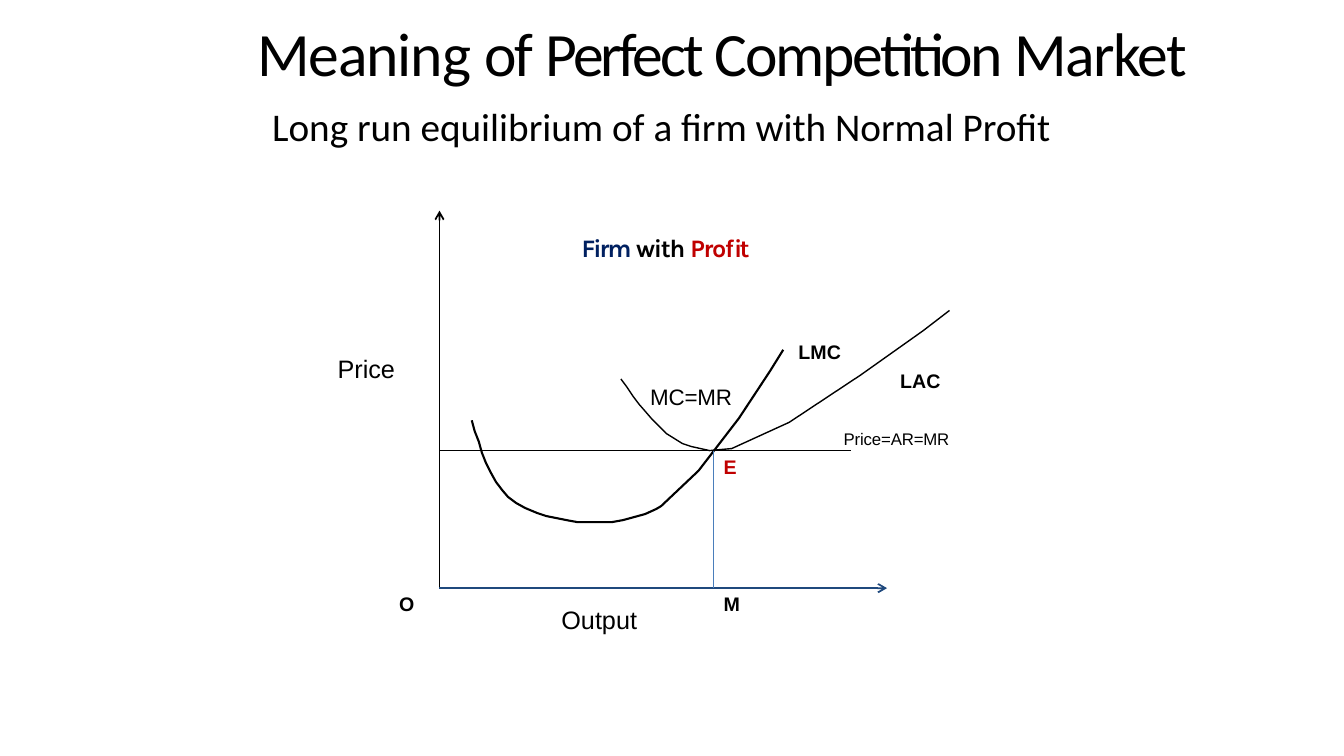
from dataclasses import dataclass

from lxml.etree import SubElement
from pptx import Presentation
from pptx.dml.color import RGBColor
from pptx.enum.shapes import MSO_CONNECTOR
from pptx.enum.text import MSO_ANCHOR
from pptx.oxml.ns import qn
from pptx.util import Inches, Pt

# Grid: one cell is a tenth of an inch, so the slide is 133.33 columns by 75 rows
CELL = Inches(0.1)
COLUMNS, ROWS = 133.33, 75

# Shared places of the diagram, in columns and rows
ORIGIN_X, ORIGIN_Y = 43.6, 58.35
OUTPUT_X, PRICE_Y = 70.8, 44.7


@dataclass(frozen=True)
class Theme:
    black: str = "000000"
    navy: str = "002060"
    red: str = "C00000"
    axis_blue: str = "1F497D"
    drop_blue: str = "4A7EBB"
    heading_font: str = "Calibri"
    caption_font: str = "Karla"
    label_font: str = "Arial"
    title: int = 44
    subtitle: int = 28
    label: int = 18
    equation: int = 16
    point: int = 14
    note: int = 12


THEME = Theme()

# Curves as (column, row) points
LAC_CURVE = [
    (61.6, 37.6), (62.2, 38.4), (62.8, 39.3), (63.4, 40.1), (64.1, 40.9),
    (64.7, 41.6), (65.4, 42.3), (66.1, 43.0), (66.9, 43.5), (67.7, 44.0),
    (68.6, 44.3), (69.5, 44.5), (70.4, 44.7), (71.5, 44.6), (72.6, 44.5),
    (78.3, 41.9), (85.4, 37.2), (91.6, 32.8), (94.2, 30.8),
]
LMC_CURVE = [
    (46.8, 41.7), (47.1, 42.8), (47.5, 43.8), (47.8, 44.9), (48.2, 45.9),
    (48.7, 46.9), (49.2, 47.8), (49.8, 48.6), (50.4, 49.3), (51.2, 49.9),
    (52.1, 50.4), (53.3, 50.9), (54.2, 51.2), (55.2, 51.4), (56.2, 51.6),
    (57.3, 51.8), (58.4, 51.8), (59.5, 51.8), (60.7, 51.8), (61.8, 51.6),
    (62.9, 51.3), (64.0, 51.0), (65.1, 50.5), (65.6, 50.2), (69.3, 46.7),
    (73.3, 41.5), (76.4, 36.8), (77.7, 34.7),
]


def cells(*counts):
    return [round(count * CELL) for count in counts]


def apply_format(target, values):
    for name, value in values.items():
        setattr(target, name, value)


def add_text(page, place, spans, size, font=THEME.label_font, bold=False,
             color=THEME.black, before=1, leading=None, anchor=MSO_ANCHOR.TOP):
    """Spans are (text, letter spacing in points) with an optional own colour."""
    frame = page.shapes.add_textbox(*cells(*place)).text_frame
    apply_format(frame, {
        "word_wrap": True, "vertical_anchor": anchor,
        "margin_left": Inches(0.01), "margin_right": 0,
        "margin_top": 0 if leading else Inches(0.01), "margin_bottom": 0,
    })
    para = frame.paragraphs[0]
    if leading:
        para.line_spacing = Pt(leading)
    else:
        para.space_before = Pt(before)
    for text, spacing, *own_color in spans:
        span = para.add_run()
        span.text = text
        apply_format(span.font, {"name": font, "size": Pt(size), "bold": bold})
        span.font.color.rgb = RGBColor.from_string((own_color or [color])[0])
        if spacing:
            span.font._element.set("spc", str(round(spacing * 100)))


def add_line(page, start, end, color=THEME.black, width=1, arrow=False):
    line = page.shapes.add_connector(
        MSO_CONNECTOR.STRAIGHT, *cells(*start, *end))
    line.line.color.rgb = RGBColor.from_string(color)
    line.line.width = Pt(width)
    if arrow:
        SubElement(line.line._get_or_add_ln(), qn("a:tailEnd"),
                   type="arrow", w="med", len="med")
    SubElement(line._element.spPr, qn("a:effectLst"))


def add_curve(page, points, width):
    # Ten drawing units to a cell keep the tenths of the points
    units = [(round(column * 10), round(row * 10)) for column, row in points]
    builder = page.shapes.build_freeform(*units[0], scale=CELL / 10)
    builder.add_line_segments(units[1:], close=False)
    curve = builder.convert_to_shape()
    curve.shadow.inherit = False
    curve.fill.background()
    curve.line.color.rgb = RGBColor.from_string(THEME.black)
    curve.line.width = Pt(width)


def add_headings(page):
    add_text(page, (25.4, 1.3, 95.2, 7.6),
             [("Meaning ", -0.8), ("of ", -1.3), ("Perfect ", -2.3),
              ("Competition ", -1.7), ("Market", -1.1)],
             THEME.title, THEME.heading_font, anchor=MSO_ANCHOR.MIDDLE)
    add_text(page, (26.9, 10.1, 79.6, 4.8),
             [("Long run equilibrium of a firm with Normal Profit", 0)],
             THEME.subtitle, THEME.heading_font)
    add_text(page, (57.6, 22.9, 17.1, 3.3),
             [("Firm ", -1.4, THEME.navy), ("with ", -0.9),
              ("Profit", -1, THEME.red)],
             THEME.label, THEME.caption_font, bold=True)


def add_diagram(page):
    # Cost curves
    add_curve(page, LAC_CURVE, 1)
    add_curve(page, LMC_CURVE, 1.5)
    # Axes
    origin = (ORIGIN_X, ORIGIN_Y)
    add_line(page, origin, (ORIGIN_X, 20.9), width=1.25, arrow=True)
    add_line(page, origin, (88, ORIGIN_Y), THEME.axis_blue, 1.25, arrow=True)
    # Price line and the drop from equilibrium to output
    add_line(page, (ORIGIN_X, PRICE_Y), (84.4, PRICE_Y))
    add_line(page, (OUTPUT_X, PRICE_Y), (OUTPUT_X, ORIGIN_Y), THEME.drop_blue)


def add_labels(page):
    # Axis names
    add_text(page, (33.4, 35, 6, 3.3), [("Price", 0)], THEME.label)
    add_text(page, (55.6, 60, 7.8, 2.9),
             [("Outp", 0), ("u", -0.1), ("t", 0)], THEME.label, leading=20.9)
    # Equations
    add_text(page, (83.6, 42.4, 10.9, 2.2), [("Price=AR=MR", -0.1)], THEME.note)
    add_text(page, (64.4, 37.9, 8.5, 2.8), [("MC=MR", -0.1)], THEME.equation)
    # Curve names
    for place, spans in (
        ((79.1, 33.6, 4.5, 2.5), [("L", -0.1), ("M", 0.1), ("C", 0)]),
        ((89.2, 36.5, 4.2, 2.5), [("L", -0.1), ("A", -0.5), ("C", 0)]),
    ):
        add_text(page, place, spans, THEME.point, bold=True)
    # Marked points
    for name, column in (("O", 39.5), ("M", 71.7)):
        add_text(page, (column, 58.8, 1.9, 2.2), [(name, 0)], THEME.point,
                 bold=True, leading=16.5)
    add_text(page, (71.7, 45, 1.6, 2.5), [("E", 0)], THEME.point,
             bold=True, color=THEME.red)


def main():
    deck = Presentation()
    deck.slide_width, deck.slide_height = cells(COLUMNS, ROWS)
    page = deck.slides.add_slide(deck.slide_layouts[6])
    add_headings(page)
    add_diagram(page)
    add_labels(page)
    deck.save("out.pptx")


if __name__ == "__main__":
    main()
